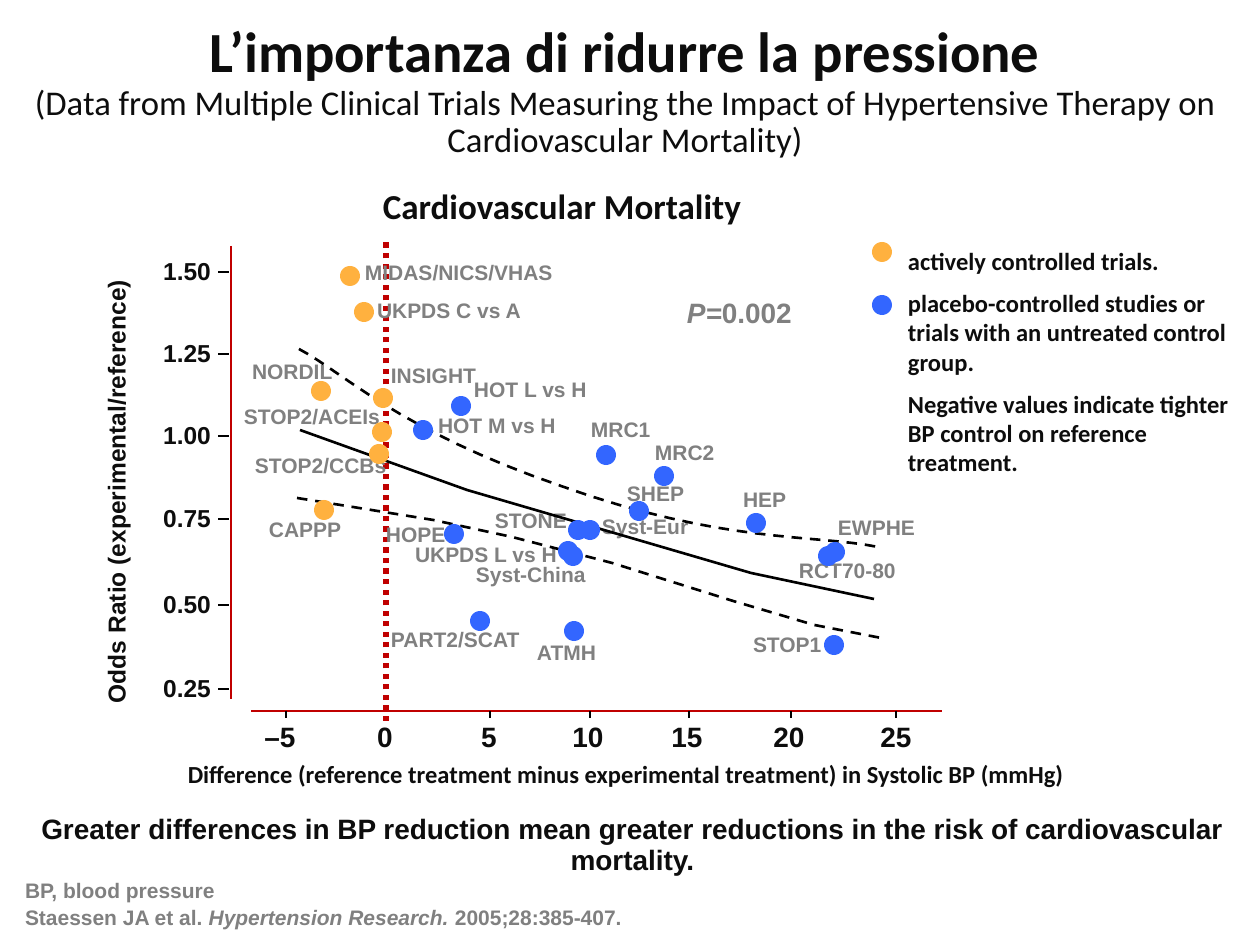
"""Build the cardiovascular mortality slide."""
from lxml import etree
from pptx import Presentation
from pptx import util as u
from pptx.dml.color import RGBColor
from pptx.enum import dml, shapes, text
from pptx.oxml.ns import qn

INK = RGBColor(0x0D, 0x0D, 0x0D)
GREY = RGBColor(0x80, 0x80, 0x80)
BLACK = RGBColor(0, 0, 0)
RED = RGBColor(0xC0, 0, 0)
ORANGE = RGBColor(0xFF, 0xB1, 0x3F)
BLUE = RGBColor(0x33, 0x66, 0xFF)

LEFT, CENTER, RIGHT = text.PP_ALIGN.LEFT, text.PP_ALIGN.CENTER, text.PP_ALIGN.RIGHT
TOP, MIDDLE, BOTTOM = text.MSO_ANCHOR.TOP, text.MSO_ANCHOR.MIDDLE, text.MSO_ANCHOR.BOTTOM
DASH, DOT = dml.MSO_LINE.DASH, dml.MSO_LINE.ROUND_DOT

TITLE = "L’importanza di ridurre la pressione"
SUBTITLE = ("(Data from Multiple Clinical Trials Measuring the Impact of "
            "Hypertensive Therapy on Cardiovascular Mortality)")
HEADING = "Cardiovascular Mortality"
Y_TITLE = "Odds Ratio (experimental/reference)"
X_TITLE = "Difference (reference treatment minus experimental treatment) in Systolic BP (mmHg)"
LEGEND = [
    "actively controlled trials.",
    "placebo-controlled studies or trials with an untreated control group.",
    "Negative values indicate tighter BP control on reference treatment.",
]
MESSAGE = ("Greater differences in BP reduction mean greater reductions in the "
           "risk of cardiovascular mortality.")
ABBREVIATION = "BP, blood pressure"
CITATION = [("Staessen JA et al. ", False), ("Hypertension Research.", True),
            (" 2005;28:385-407.", False)]

TRIAL_LABELS = [
    ("MRC2", 655, 434, 62), ("MIDAS/NICS/VHAS", 365, 254, 191),
    ("UKPDS C vs A", 377, 292, 147), ("NORDIL", 252, 353, 84),
    ("INSIGHT", 391, 357, 88), ("HOT L vs H", 474, 371, 117),
    ("HOT M vs H", 438, 407, 120), ("MRC1", 591, 411, 62),
    ("HEP", 743, 481, 46), ("EWPHE", 838, 509, 80),
    ("STOP1", 753, 626, 71), ("ATMH", 537, 634, 66),
    ("PART2/SCAT", 391, 621, 132), ("CAPPP", 269, 511, 75),
    ("Syst-China", 476, 556, 113), ("Syst-Eur", 602, 508, 89),
    ("STONE", 495, 502, 75), ("UKPDS L vs H", 415, 536, 146),
    ("RCT70-80", 799, 552, 99), ("HOPE", 386, 516, 62),
    ("SHEP", 627, 475, 60), ("STOP2/ACEIs", 244, 398, 139),
    ("STOP2/CCBs", 255, 447, 134),
]
DOTS = {
    ORANGE: [(340, 266), (354, 302), (311, 381), (373, 388), (372, 422),
             (369, 444), (314, 500), (872, 242)],
    BLUE: [(558, 541), (451, 396), (413, 420), (596, 445), (654, 466),
           (746, 513), (629, 501), (825, 542), (818, 546), (568, 520),
           (580, 520), (563, 546), (444, 524), (470, 611), (564, 621),
           (824, 635), (872, 295)],
}
Y_TICKS = [("1.50", 272), ("1.25", 354), ("1.00", 436),
           ("0.75", 519), ("0.50", 605), ("0.25", 689)]
X_TICKS = [("–5", 286, 280), ("0", None, 385), ("5", 490, 489), ("10", 590, 588),
           ("15", 689, 687), ("20", 791, 789), ("25", 896, 896)]
UPPER_BEZIERS = [
    [(299, 349), (343, 372), (398, 430), (561, 486)],
    [(561, 486), (723, 544), (813, 534), (878, 547)],
]
FIT_LINE = [(300, 430), (467, 490), (751, 573), (874, 599)]
LOWER_LINE = [(297, 498), (433, 520), (512, 537), (612, 563),
              (733, 601), (814, 625), (881, 638)]
DOT_SIZE = 20


def px(n):
    return u.Emu(round(n * 914400 / 126))


def bezier(a, b, c, d, steps=16):
    weights = [((1 - t) ** 3, 3 * t * (1 - t) ** 2, 3 * t * t * (1 - t), t ** 3)
               for t in (i / steps for i in range(steps + 1))]
    return [tuple(sum(w * q[k] for w, q in zip(ws, (a, b, c, d))) for k in (0, 1))
            for ws in weights]


def add_text(slide, box, paras, size, color=INK, font="Arial", align=LEFT,
             anchor=BOTTOM, wrap=True, spacing=0.9, before=0, inset=0, grow=True):
    sp = slide.shapes.add_textbox(*map(px, box))
    tf = sp.text_frame
    tf.word_wrap = wrap
    tf.vertical_anchor = anchor
    tf.margin_left = tf.margin_right = u.Inches(inset)
    if grow:
        tf.auto_size = text.MSO_AUTO_SIZE.SHAPE_TO_FIT_TEXT
    for i, content in enumerate(paras):
        p = tf.paragraphs[0] if i == 0 else tf.add_paragraph()
        for words, italic in [(content, None)] if isinstance(content, str) else content:
            r = p.add_run()
            r.text = words
            if italic is not None:
                r.font.italic = italic
        p.alignment = align
        p.line_spacing = spacing
        p.space_before = u.Pt(before if i else 0)
        p.font.size, p.font.name, p.font.bold = u.Pt(size), font, True
        p.font.color.rgb = color
    return sp


def style_line(line, color, width, dash=None):
    line.color.rgb = color
    line.width = u.Pt(width)
    if dash:
        line.dash_style = dash


def add_line(parent, x1, y1, x2, y2, color=BLACK, width=1, dash=None):
    sp = parent.shapes.add_connector(shapes.MSO_CONNECTOR.STRAIGHT, *map(px, (x1, y1, x2, y2)))
    style_line(sp.line, color, width, dash)
    etree.SubElement(sp._element.spPr, qn("a:effectLst"))


def add_curve(slide, points, dash=None):
    scaled = [(px(x), px(y)) for x, y in points]
    builder = slide.shapes.build_freeform(*scaled[0], scale=1.0)
    builder.add_line_segments(scaled[1:], close=False)
    sp = builder.convert_to_shape()
    sp.shadow.inherit = False
    sp.fill.background()
    style_line(sp.line, BLACK, 1.5, dash)


def add_dot(slide, x, y, color):
    sp = slide.shapes.add_shape(shapes.MSO_SHAPE.OVAL, *map(px, (x, y, DOT_SIZE, DOT_SIZE)))
    sp.shadow.inherit = False
    sp.fill.solid()
    sp.fill.fore_color.rgb = color
    sp.line.fill.background()


def add_title(slide):
    sp = add_text(slide, (0, 16, 1250, 152), [TITLE], 32.4, font="Calibri",
                  align=CENTER, anchor=MIDDLE, inset=0.1, grow=False)
    p = sp.text_frame.paragraphs[0]
    p.add_line_break()
    r = p.add_run()
    r.text = SUBTITLE
    r.font.size, r.font.bold = u.Pt(19.8), False


def add_axes(slide):
    for label, y in Y_TICKS:
        add_text(slide, (161, y - 20, 50, 40), [label], 14, align=RIGHT, wrap=False)
    ticks = slide.shapes.add_group_shape()
    for _, y in Y_TICKS:
        add_line(ticks, 229, y, 218, y)
    add_line(slide, 231, 246, 231, 699, RED)
    add_line(slide, 942, 711, 251, 711, RED)
    for label, x, middle in X_TICKS:
        if x:
            add_line(slide, x, 711, x, 718)
        add_text(slide, (middle - 18, 716, 36, 44), [label], 16, align=CENTER, wrap=False)


def add_footer(slide):
    sp = add_text(slide, (15, 809, 1235, 125), [MESSAGE, ABBREVIATION, CITATION], 12,
                  GREY, before=2.5, inset=0.08)
    sp.text_frame.margin_top = sp.text_frame.margin_bottom = u.Inches(0.03)
    p = sp.text_frame.paragraphs[0]
    p.alignment = CENTER
    p.font.size = u.Pt(16)
    p.font.color.rgb = INK


def main():
    prs = Presentation()
    prs.slide_width, prs.slide_height = px(1260), px(945)
    slide = prs.slides.add_slide(prs.slide_layouts[6])
    add_title(slide)
    add_footer(slide)
    add_line(slide, 386, 721, 386, 241, RED, 3, DOT)
    for label, x, y, width in TRIAL_LABELS:
        add_text(slide, (x, y, width, 37), [label], 12, GREY, wrap=False)
    first, second = UPPER_BEZIERS
    add_curve(slide, bezier(*first) + bezier(*second)[1:], DASH)
    add_curve(slide, FIT_LINE)
    add_curve(slide, LOWER_LINE, DASH)
    for color, places in DOTS.items():
        for x, y in places:
            add_dot(slide, x, y, color)
    add_axes(slide)
    sp = add_text(slide, (-108, 470, 449, 43), [Y_TITLE], 14, align=CENTER,
                  anchor=TOP, spacing=1, inset=0.1)
    sp.rotation = 270
    add_text(slide, (687, 292, 108, 44), [[("P=", True), ("0.002", False)]], 16, GREY, wrap=False)
    add_text(slide, (335, 178, 454, 55), [HEADING], 20, font="Calibri", align=CENTER,
             anchor=TOP, spacing=1, inset=0.1)
    add_text(slide, (112, 755, 1028, 40), [X_TITLE], 14, font="Calibri", align=CENTER)
    add_text(slide, (908, 232, 341, 251), LEGEND, 14, font="Calibri", spacing=1, before=7)
    prs.save("out.pptx")


if __name__ == "__main__":
    main()
